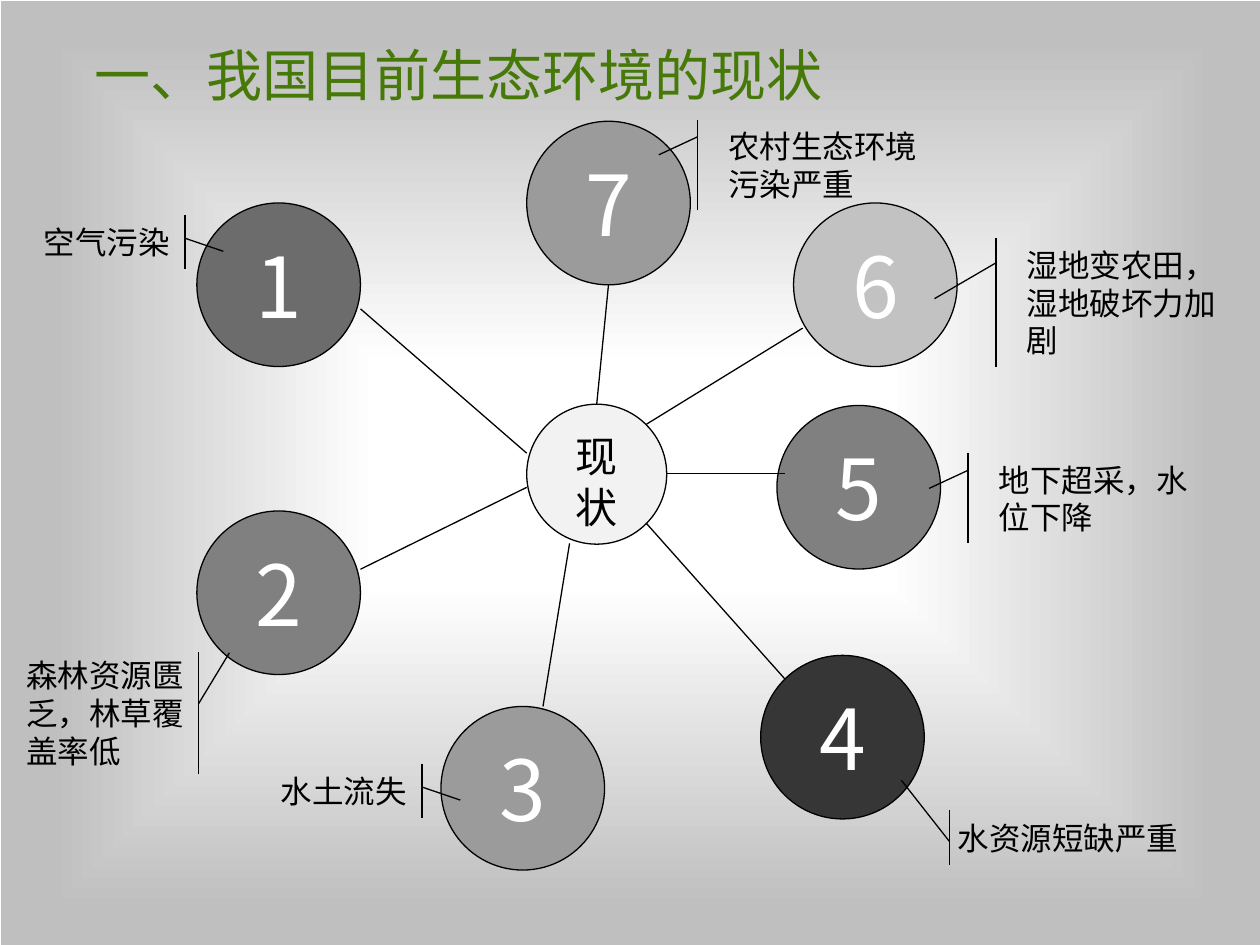
"""Build a slide on the current state of the ecological environment."""
from lxml.etree import SubElement
from pptx import Presentation
from pptx.dml.color import RGBColor
from pptx.enum.shapes import MSO_CONNECTOR, MSO_SHAPE
from pptx.enum.text import MSO_ANCHOR, PP_ALIGN
from pptx.oxml import parse_xml
from pptx.oxml.ns import nsdecls, qn
from pptx.util import Pt

FONT = "Noto Sans CJK SC"
BLACK = RGBColor(0x00, 0x00, 0x00)
WHITE = RGBColor(0xFF, 0xFF, 0xFF)
GREEN = RGBColor(0x46, 0x79, 0x08)
HUB_GRAY = RGBColor(0xF2, 0xF2, 0xF2)
DARK_GRAY = RGBColor(0x6C, 0x6C, 0x6C)
MIDDLE_GRAY = RGBColor(0x80, 0x80, 0x80)
SOFT_GRAY = RGBColor(0x9B, 0x9B, 0x9B)
PALE_GRAY = RGBColor(0xC2, 0xC2, 0xC2)
CHARCOAL = RGBColor(0x36, 0x36, 0x36)


def write(shape, text, size, color, align, anchor, spacing=None):
    frame = shape.text_frame
    frame.word_wrap = True
    frame.vertical_anchor = anchor
    frame.text = text
    paragraph = frame.paragraphs[0]
    paragraph.alignment = align
    paragraph.line_spacing = spacing
    font = paragraph.runs[0].font
    font.size = Pt(size)
    font.color.rgb = color
    font.name = FONT
    SubElement(font._element, qn("a:ea"), typeface=FONT)


def add_outlined(kind, left, top, width, height):
    shape = slide.shapes.add_shape(kind, Pt(left), Pt(top), Pt(width), Pt(height))
    shape.shadow.inherit = False
    shape.line.color.rgb = BLACK
    shape.line.width = Pt(0.75)
    return shape


presentation = Presentation()
presentation.slide_width = Pt(720)
presentation.slide_height = Pt(540)
slide = presentation.slides.add_slide(presentation.slide_layouts[6])

backdrop = slide.shapes.add_shape(MSO_SHAPE.RECTANGLE, Pt(0.7), Pt(0.7), Pt(721.4), Pt(540))
backdrop.shadow.inherit = False
backdrop.line.fill.background()
backdrop.fill.background()
stops = "".join(
    f'<a:gs pos="{position * 1000}"><a:srgbClr val="{color}"/></a:gs>'
    for position, color in [(0, "FFFFFF"), (23, "FFFFFF"), (92, "BFBFBF"), (100, "BFBFBF")]
)
gradient = parse_xml(
    f'<a:gradFill {nsdecls("a")} rotWithShape="1"><a:gsLst>{stops}</a:gsLst>'
    '<a:path path="rect"><a:fillToRect l="50000" t="50000" r="50000" b="50000"/></a:path>'
    "</a:gradFill>"
)
properties = backdrop._element.spPr
properties.replace(properties.find(qn("a:noFill")), gradient)

title = slide.shapes.add_textbox(Pt(46.8), Pt(17.3), Pt(444.2), Pt(49.7))
write(title, "一、我国目前生态环境的现状", 32, GREEN, PP_ALIGN.LEFT, MSO_ANCHOR.MIDDLE)

hub = add_outlined(MSO_SHAPE.FLOWCHART_CONNECTOR, 301, 231, 80, 80)
hub.fill.solid()
hub.fill.fore_color.rgb = HUB_GRAY
write(hub, "现状", 24, BLACK, PP_ALIGN.CENTER, MSO_ANCHOR.TOP, Pt(28.8))

circles = [
    (112.5, 116, DARK_GRAY),
    (112.5, 292, MIDDLE_GRAY),
    (252, 403.7, SOFT_GRAY),
    (434.7, 374.5, CHARCOAL),
    (444, 231.7, MIDDLE_GRAY),
    (453.5, 116, PALE_GRAY),
    (301, 69.3, SOFT_GRAY),
]
for number, (left, top, color) in enumerate(circles, start=1):
    circle = add_outlined(MSO_SHAPE.FLOWCHART_CONNECTOR, left, top, 93.5, 93.5)
    circle.fill.solid()
    circle.fill.fore_color.rgb = color
    write(circle, str(number), 48, WHITE, PP_ALIGN.CENTER, MSO_ANCHOR.MIDDLE)

spokes = [
    (206, 176.5, 301, 259),
    (206, 325.3, 301, 278.5),
    (325.5, 310.5, 310.3, 403.7),
    (369.3, 299, 448.5, 388),
    (381, 270.7, 448.5, 270.7),
    (369.3, 242.5, 458.7, 187.5),
    (341, 231, 347.7, 162.8),
]
for spoke in spokes:
    connector = slide.shapes.add_connector(MSO_CONNECTOR.STRAIGHT, *map(Pt, spoke))
    connector.line.color.rgb = BLACK
    connector.line.width = Pt(0.75)
    SubElement(connector._element.spPr, qn("a:effectLst"))

callouts = [
    ("空气污染", 18, 122.7, 104.4, 31.2, (0.43, 0.84, 0.67, 1.05)),
    ("森林资源匮乏，林草覆盖率低", 7.9, 372.4, 104.4, 69.8, (0.43, 1.01, 0.01, 1.18)),
    ("水土流失", 153.4, 436.3, 104.4, 31.2, (0.43, 0.84, 0.67, 1.05)),
    ("水资源短缺严重", 536.4, 463, 152.6, 31.2, (0.57, 0.04, -0.55, -0.14)),
    ("地下超采，水位下降", 563.5, 259, 130.3, 51.5, (0.19, -0.08, 0.39, -0.25)),
    ("湿地变农田，湿地破坏力加剧", 579.6, 136.3, 130.3, 73.2, (0.19, -0.08, 0.47, -0.35)),
    ("农村生态环境污染严重", 409, 68.4, 130.3, 51.5, (0.19, -0.08, 0.39, -0.25)),
]
for text, left, top, width, height, pointer in callouts:
    callout = add_outlined(MSO_SHAPE.LINE_CALLOUT_1_ACCENT_BAR, left, top, width, height)
    callout.fill.background()
    for index, value in enumerate(pointer):
        callout.adjustments[index] = value
    write(callout, text, 18, BLACK, PP_ALIGN.LEFT, MSO_ANCHOR.MIDDLE, Pt(21.6))
    if text == "水资源短缺严重":
        callout.text_frame.margin_left = Pt(11)

presentation.save("out.pptx")
